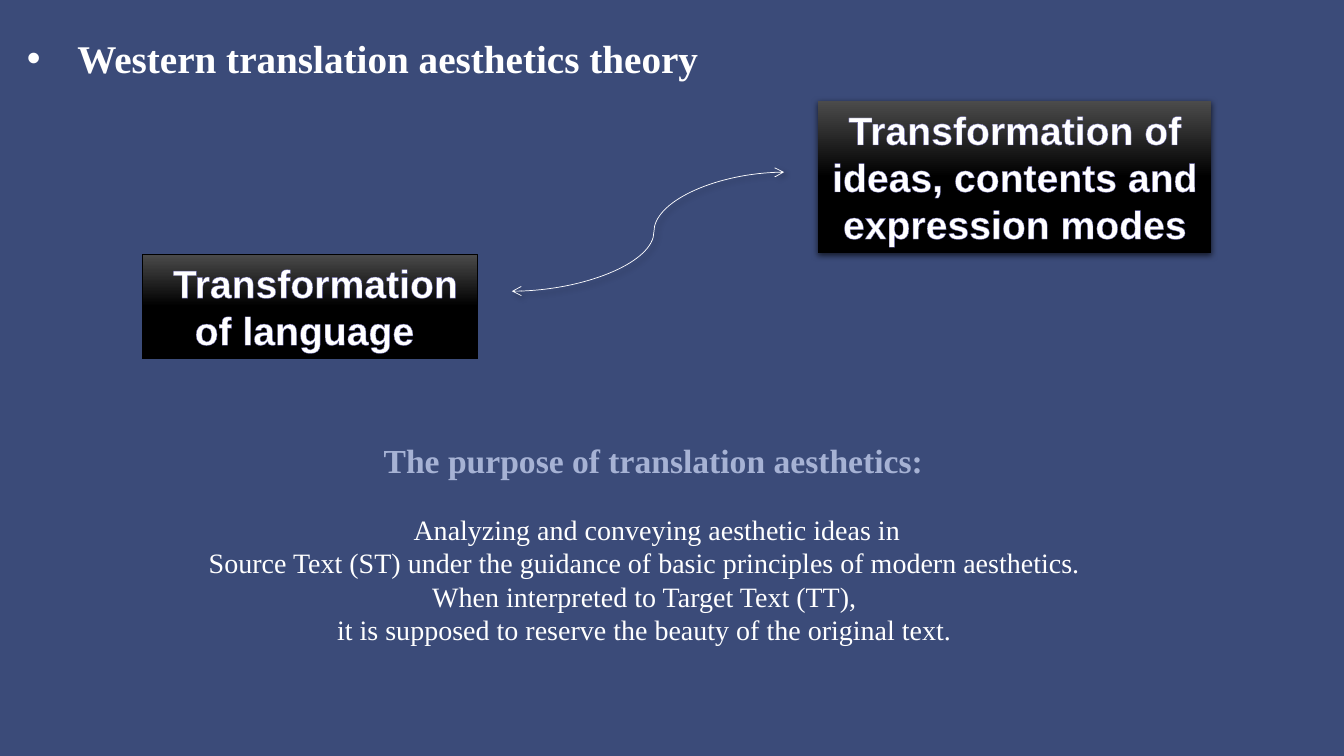
from lxml import etree
from pptx import Presentation
from pptx.dml.color import RGBColor as RGB
from pptx.enum.shapes import MSO_CONNECTOR as CONN, MSO_SHAPE as SHAPE
from pptx.enum.text import MSO_ANCHOR as ANCHOR, PP_ALIGN as ALIGN
from pptx.oxml import parse_xml
from pptx.oxml.ns import nsdecls, qn
from pptx.util import Cm, Pt

COLORS = {
    "back": "3B4B79",
    "text": "FFFFFF",
    "heading": "A6B2D4",
    "box_top": "4B4B4B",
    "box": "000000",
    "outline": "5E5CA2",
}
SERIF = "Times New Roman"
SANS = "Arial"


def rgb(name):
    return RGB.from_string(COLORS[name])


def write(p, text, size, font=SERIF, color="text", bold=False, align=None, outline=None):
    r = p.add_run()
    r.text = text
    r.font.size = Pt(size)
    r.font.name = font
    r.font.bold = bold
    r.font.color.rgb = rgb(color)
    if align is not None:
        p.alignment = align
    if outline:
        r.font._element.insert(0, parse_xml(
            f'<a:ln {nsdecls("a")} w="10160"><a:solidFill>'
            f'<a:srgbClr val="{COLORS[outline]}"/></a:solidFill></a:ln>'))


def indent(p, left, first=0, bullet=None):
    pPr = p._p.get_or_add_pPr()
    pPr.set("marL", str(Cm(left)))
    pPr.set("indent", str(Cm(first)))
    if bullet:
        etree.SubElement(pPr, qn("a:buFont")).set("typeface", SANS)
        etree.SubElement(pPr, qn("a:buChar")).set("char", bullet)


def add_shadow(sp, alpha, blur, dist, angle):
    sp._element.spPr.append(parse_xml(
        f'<a:effectLst {nsdecls("a")}><a:outerShdw blurRad="{Pt(blur)}" dist="{Pt(dist)}" '
        f'dir="{angle * 60000}" rotWithShape="0"><a:srgbClr val="000000">'
        f'<a:alpha val="{alpha * 1000}"/></a:srgbClr></a:outerShdw></a:effectLst>'))


def text_frame(s, box, wrap=True):
    tf = s.shapes.add_textbox(*map(Cm, box)).text_frame
    tf.word_wrap = wrap
    return tf


def add_title(s, box, text):
    p = text_frame(s, box, wrap=False).paragraphs[0]
    indent(p, 1.27, -1.27, "•")
    write(p, text, 28, bold=True)


def add_label(s, box, text, border=False, shadow=False):
    sp = s.shapes.add_shape(SHAPE.RECTANGLE, *map(Cm, box))
    sp.fill.gradient()
    sp.fill.gradient_angle = 270
    for stop, pos, color in zip(sp.fill.gradient_stops, (0, 0.5), ("box_top", "box")):
        stop.position = pos
        stop.color.rgb = rgb(color)
    if border:
        sp.line.color.rgb = rgb("box")
        sp.line.width = Pt(0.5)
    else:
        sp.line.fill.background()
    if shadow:
        add_shadow(sp, 63, 4.5, 1.5, 90)
    else:
        sp.shadow.inherit = False
    tf = sp.text_frame
    tf.word_wrap = True
    tf.vertical_anchor = ANCHOR.TOP
    write(tf.paragraphs[0], text, 28, font=SANS, bold=True,
          align=ALIGN.CENTER, outline="outline")


def add_curve(s, start, end):
    c = s.shapes.add_connector(CONN.CURVE, *map(Cm, start + end))
    c.line.color.rgb = rgb("text")
    c.line.width = Pt(0.5)
    ln = c.line._get_or_add_ln()
    for tag in ("a:headEnd", "a:tailEnd"):
        etree.SubElement(ln, qn(tag)).set("type", "arrow")
    guide = etree.SubElement(c._element.spPr.prstGeom.get_or_add_avLst(), qn("a:gd"))
    guide.set("name", "adj1")
    guide.set("fmla", "val 52200")
    add_shadow(c, 40, 4, 3, 45)


def add_purpose(s, box, heading, lines):
    left, top, width, height = box
    head = text_frame(s, (left + 4.57, top, 15.01, 1.27))
    write(head.paragraphs[0], heading, 24, color="heading", bold=True)
    tf = text_frame(s, (left, top + 1.83, width, height - 1.83))
    for i, line in enumerate(lines):
        p = tf.paragraphs[0] if i == 0 else tf.add_paragraph()
        write(p, line, 20, align=ALIGN.CENTER)
    indent(tf.paragraphs[0], 0.63)


def main():
    prs = Presentation()
    prs.slide_width, prs.slide_height = Cm(33.87), Cm(19.05)
    s = prs.slides.add_slide(prs.slide_layouts[6])
    s.background.fill.solid()
    s.background.fill.fore_color.rgb = rgb("back")

    add_title(s, (0.43, 0.74, 17.5, 1.45), "Western translation aesthetics theory")
    add_label(s, (3.58, 6.4, 8.46, 2.64), " Transformation of language ", border=True)
    add_label(s, (20.62, 2.54, 9.91, 3.84),
              "Transformation of ideas, contents and expression modes", shadow=True)
    add_curve(s, (12.9, 7.34), (19.76, 4.34))
    add_purpose(s, (4.85, 10.95, 22.96, 5.51), "The purpose of translation aesthetics:", [
        "Analyzing and conveying aesthetic ideas in ",
        "Source Text (ST) under the guidance of basic principles of modern aesthetics. ",
        "When interpreted to Target Text (TT), ",
        "it is supposed to reserve the beauty of the original text. ",
    ])
    prs.save("out.pptx")


if __name__ == "__main__":
    main()
